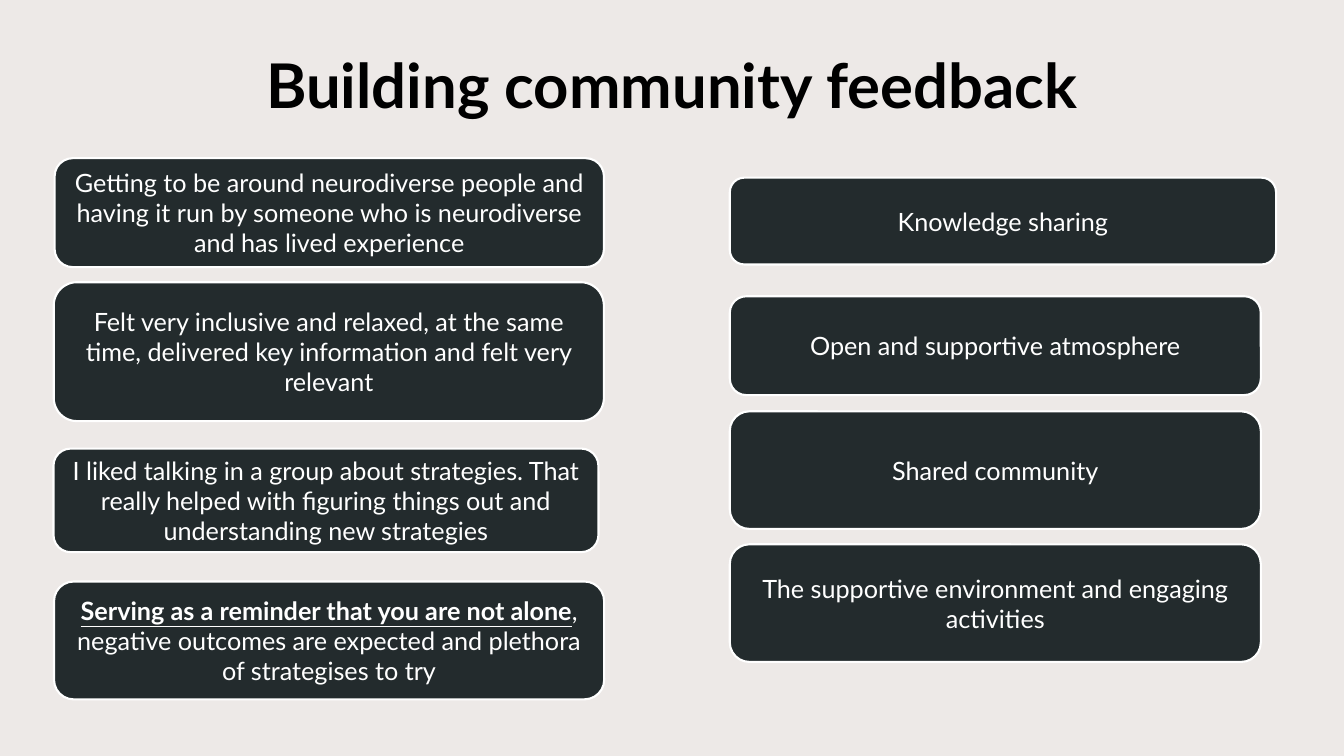
"""Build the slide of community feedback cards."""
from dataclasses import dataclass

from pptx import Presentation
from pptx.dml.color import RGBColor
from pptx.enum import shapes, text
from pptx.util import Pt


@dataclass(frozen=True)
class Theme:
    """Colours and type of the slide."""
    font: str = "Lato"
    page: RGBColor = RGBColor(0xED, 0xE9, 0xE7)
    card: RGBColor = RGBColor(0x23, 0x2B, 0x2D)
    light: RGBColor = RGBColor(0xFF, 0xFF, 0xFF)
    title: RGBColor = RGBColor(0, 0, 0)
    title_size: float = 44
    card_size: float = 18
    outline: float = 1.5


@dataclass(frozen=True)
class Card:
    """A feedback card, measured in points."""
    left: float
    top: float
    width: float
    height: float
    body: str
    lead: str = ""


THEME = Theme()
RIGHT = 521.3
CARDS = [
    Card(39, 113, 392.4, 77.8, "Getting to be around neurodiverse people and having it "
         "run by someone who is neurodiverse and has lived experience"),
    Card(38.4, 201.6, 393, 99.2, "Felt very inclusive and relaxed, at the same time, "
         "delivered key information and felt very relevant"),
    Card(38.2, 320.4, 389.3, 74, "I liked talking in a group about strategies. That really "
         "helped with figuring things out and understanding new strategies"),
    Card(38.6, 415.4, 393, 84.2, ", negative outcomes are expected and plethora of "
         "strategises to try", "Serving as a reminder that you are not alone"),
    Card(RIGHT, 126.9, 390.2, 62, "Knowledge sharing"),
    Card(RIGHT, 211.6, 379.3, 70.6, "Open and supportive atmosphere"),
    Card(RIGHT, 293.8, 379.3, 84, "Shared community"),
    Card(RIGHT, 388.8, 379.3, 84, "The supportive environment and engaging activities"),
]


def add_text(para, body: str, size: float, colour: RGBColor, lead: str = "") -> None:
    """Write centred text, with an optional bold underlined lead."""
    para.alignment = text.PP_ALIGN.CENTER
    fonts = [para.font]
    for part in filter(None, (lead, body)):
        span = para.add_run()
        span.text = part
        fonts.append(span.font)
    for font in fonts:
        font.name = THEME.font
        font.size = Pt(size)
        font.color.rgb = colour
    if lead:
        fonts[1].bold = fonts[1].underline = True


def add_title(page, title: str) -> None:
    """Add the slide title."""
    box = page.shapes.add_textbox(Pt(75), Pt(0), Pt(810), Pt(90.7))
    frame = box.text_frame
    frame.word_wrap = True
    frame.vertical_anchor = text.MSO_ANCHOR.BOTTOM
    para = frame.paragraphs[0]
    para.line_spacing = 0.9
    add_text(para, title, THEME.title_size, THEME.title)
    para.font.bold = para.runs[0].font.bold = True


def add_card(page, card: Card) -> None:
    """Add one rounded feedback card."""
    box = page.shapes.add_shape(
        shapes.MSO_SHAPE.ROUNDED_RECTANGLE,
        Pt(card.left), Pt(card.top), Pt(card.width), Pt(card.height))
    box.shadow.inherit = False
    box.fill.solid()
    box.fill.fore_color.rgb = THEME.card
    box.line.color.rgb = THEME.light
    box.line.width = Pt(THEME.outline)
    frame = box.text_frame
    frame.word_wrap = True
    frame.vertical_anchor = text.MSO_ANCHOR.MIDDLE
    add_text(frame.paragraphs[0], card.body, THEME.card_size, THEME.light, card.lead)


def main() -> None:
    """Build and save the deck."""
    deck = Presentation()
    deck.slide_width, deck.slide_height = Pt(960), Pt(540)
    page = deck.slides.add_slide(deck.slide_layouts[6])
    page.background.fill.solid()
    page.background.fill.fore_color.rgb = THEME.page
    add_title(page, "Building community feedback")
    for card in CARDS:
        add_card(page, card)
    deck.save("out.pptx")


if __name__ == "__main__":
    main()
